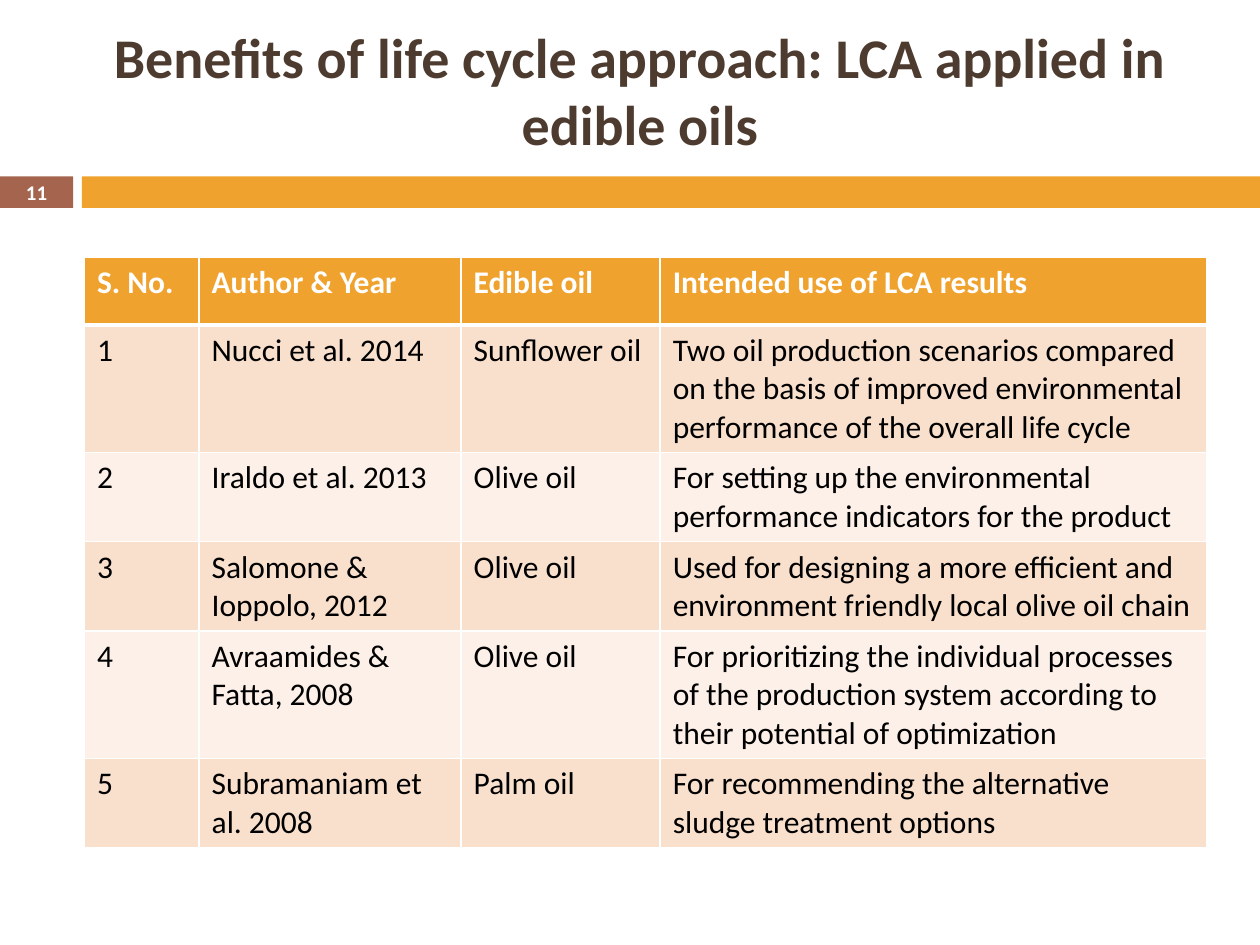
"""Build the slide on life cycle assessment studies of edible oils."""
import dataclasses

import lxml.etree
import pptx
import pptx.dml.color
import pptx.enum.shapes
import pptx.enum.text
import pptx.oxml.ns
import pptx.util

Inches = pptx.util.Inches


@dataclasses.dataclass(frozen=True)
class Theme:
    font: str = "Calibri"
    title: str = "4E3B30"
    accent: str = "F0A22E"
    number_tab: str = "A5644E"
    bands: tuple = ("F9E0CD", "FCF0E8")
    white: str = "FFFFFF"
    body: str = "000000"
    title_size: float = 32
    table_size: float = 18
    number_size: float = 11.9


theme = Theme()


def add_text(frame, text, size, color, bold, align):
    paragraph = frame.paragraphs[0]
    paragraph.alignment = align
    run = paragraph.add_run()
    run.text = text
    run.font.name = theme.font
    run.font.size = pptx.util.Pt(size)
    run.font.bold = bold
    run.font.color.rgb = pptx.dml.color.RGBColor.from_string(color)


def add_borders(cell, widths):
    properties = cell._tc.get_or_add_tcPr()
    for position, (side, width) in enumerate(widths.items()):
        line = lxml.etree.Element(pptx.oxml.ns.qn(f"a:ln{side}"), w=str(pptx.util.Pt(width)))
        fill = lxml.etree.SubElement(line, pptx.oxml.ns.qn("a:solidFill"))
        lxml.etree.SubElement(fill, pptx.oxml.ns.qn("a:srgbClr"), val=theme.white)
        properties.insert(position, line)


presentation = pptx.Presentation()
presentation.slide_width, presentation.slide_height = Inches(10), Inches(7.5)
slide = presentation.slides.add_slide(presentation.slide_layouts[5])
center = pptx.enum.text.PP_ALIGN.CENTER
left = pptx.enum.text.PP_ALIGN.LEFT
middle = pptx.enum.text.MSO_ANCHOR.MIDDLE

for start, width, color in ((0, 0.58, theme.number_tab), (0.65, 9.35, theme.accent)):
    band = slide.shapes.add_shape(
        pptx.enum.shapes.MSO_SHAPE.RECTANGLE,
        Inches(start), Inches(1.4), Inches(width), Inches(0.25),
    )
    band.shadow.inherit = False
    band.fill.solid()
    band.fill.fore_color.rgb = pptx.dml.color.RGBColor.from_string(color)
    band.line.fill.background()

title = slide.shapes.title
title.left, title.top = Inches(0.58), Inches(0.17)
title.width, title.height = Inches(9), Inches(1.08)
title.text_frame.vertical_anchor = middle
add_text(
    title.text_frame, "Benefits of life cycle approach: LCA applied in edible oils",
    theme.title_size, theme.title, True, center,
)

page_number = slide.shapes.add_textbox(0, Inches(1.39), Inches(0.58), Inches(0.27)).text_frame
page_number.margin_left = page_number.margin_right = 0
page_number.margin_top = page_number.margin_bottom = 0
page_number.word_wrap = True
page_number.vertical_anchor = middle
add_text(page_number, "11", theme.number_size, theme.white, True, center)

studies = (
    ("S. No.", "Author & Year", "Edible oil", "Intended use of LCA results"),
    ("1", "Nucci et al. 2014", "Sunflower oil",
     "Two oil production scenarios compared on the basis of improved environmental "
     "performance of the overall life cycle"),
    ("2", "Iraldo et al. 2013", "Olive oil",
     "For setting up the environmental performance indicators for the product"),
    ("3", "Salomone & Ioppolo, 2012", "Olive oil",
     "Used for designing a more efficient and environment friendly local olive oil chain"),
    ("4", "Avraamides & Fatta, 2008", "Olive oil",
     "For prioritizing the individual processes of the production system according to "
     "their potential of optimization"),
    ("5", "Subramaniam et al. 2008", "Palm oil",
     "For recommending the alternative sludge treatment options"),
)
column_widths = (0.91, 2.08, 1.58, 4.34)
row_heights = (0.54, 1.01, 0.71, 0.71, 1.01, 0.71)

study_table = slide.shapes.add_table(
    len(studies), len(column_widths), Inches(0.67), Inches(2.04),
    Inches(sum(column_widths)), Inches(sum(row_heights)),
).table
for column, width in zip(study_table.columns, column_widths):
    column.width = Inches(width)
for row_index, (study, height) in enumerate(zip(studies, row_heights)):
    study_table.rows[row_index].height = Inches(height)
    header = row_index == 0
    row_fill = theme.accent if header else theme.bands[(row_index - 1) % 2]
    row_color = theme.white if header else theme.body
    borders = {"L": 1, "R": 1, "T": 3 if row_index == 1 else 1, "B": 3 if header else 1}
    for column_index, text in enumerate(study):
        cell = study_table.cell(row_index, column_index)
        cell.fill.solid()
        cell.fill.fore_color.rgb = pptx.dml.color.RGBColor.from_string(row_fill)
        add_borders(cell, borders)
        add_text(cell.text_frame, text, theme.table_size, row_color, header, left)

presentation.save("out.pptx")
